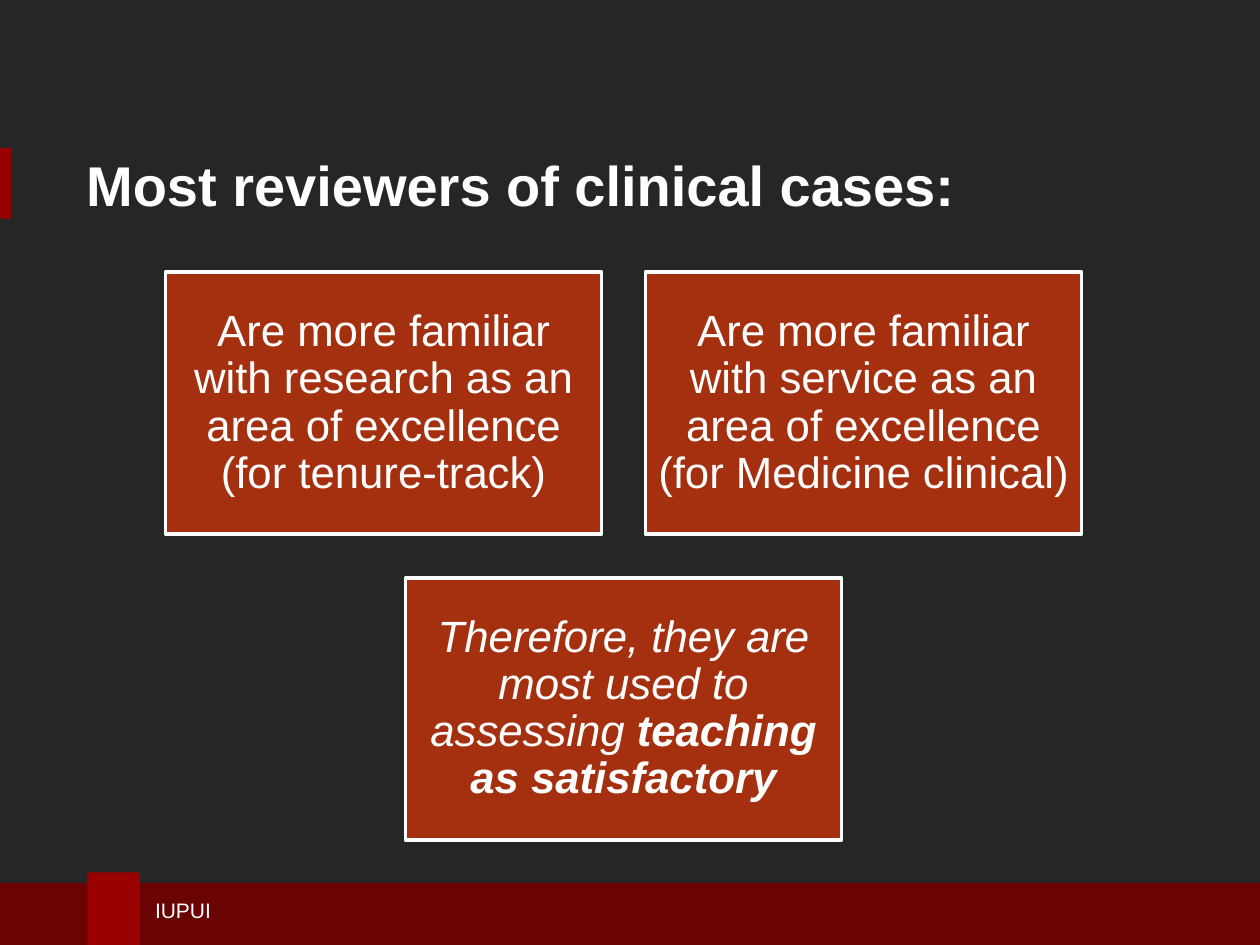
import pptx
import pptx.dml.color
import pptx.enum.shapes
import pptx.enum.text
import pptx.oxml.ns
import pptx.util
from pptx.util import Pt

RGBColor = pptx.dml.color.RGBColor
BACKGROUND = RGBColor(0x26, 0x26, 0x26)
CRIMSON = RGBColor(0x99, 0x00, 0x00)
DARK_CRIMSON = RGBColor(0x69, 0x03, 0x04)
RUST = RGBColor(0xA5, 0x30, 0x0F)
WHITE = RGBColor(0xFF, 0xFF, 0xFF)
FONT = "Arial"

CARDS = [
    [("Are more familiar with research as an area of excellence (for tenure-track)", False, False)],
    [("Are more familiar with service as an area of excellence (for Medicine clinical)", False, False)],
    [
        ("Therefore, they are most used to assessing ", False, True),
        ("teaching as satisfactory", True, True),
    ],
]


def format_run(run, size, bold=False, italic=False):
    """Apply the slide's font and white colour to a run."""
    run.font.name = FONT
    run.font.size = Pt(size)
    run.font.bold = bold
    run.font.italic = italic
    run.font.color.rgb = WHITE


def add_rectangle(slide, left, top, width, height, fill):
    """Add a flat rectangle without an outline."""
    shape = slide.shapes.add_shape(
        pptx.enum.shapes.MSO_SHAPE.RECTANGLE, Pt(left), Pt(top), Pt(width), Pt(height)
    )
    shape.shadow.inherit = False
    shape.fill.solid()
    shape.fill.fore_color.rgb = fill
    shape.line.fill.background()
    return shape


def add_footer(slide, left, top, width, height):
    """Draw the footer band with its raised block and the campus name."""
    add_rectangle(slide, left, top, width, height, DARK_CRIMSON)
    add_rectangle(slide, left + 52, top - 6, 30, height + 6, CRIMSON)
    label = slide.shapes.add_textbox(Pt(left + 83.5), Pt(top + 5), Pt(284), Pt(21.6))
    label.text_frame.word_wrap = True
    label.text_frame.vertical_anchor = pptx.enum.text.MSO_ANCHOR.MIDDLE
    label.text_frame.text = "IUPUI"
    format_run(label.text_frame.paragraphs[0].runs[0], 12)


def add_title(slide, left, top, width, height):
    """Place the title and the accent bar at the slide edge."""
    add_rectangle(slide, 0, top + 4.5, 6.5, 40.5, CRIMSON)
    title = slide.shapes.title
    title.left, title.top, title.width, title.height = Pt(left), Pt(top), Pt(width), Pt(height)
    title.text_frame.text = "Most reviewers of clinical cases:"
    title.text_frame.word_wrap = True
    title.text_frame.auto_size = pptx.enum.text.MSO_AUTO_SIZE.NONE
    title.text_frame.vertical_anchor = pptx.enum.text.MSO_ANCHOR.MIDDLE
    paragraph = title.text_frame.paragraphs[0]
    paragraph.alignment = pptx.enum.text.PP_ALIGN.LEFT
    format_run(paragraph.runs[0], 32, bold=True)


def add_card(slide, left, top, width, height, parts):
    """Draw one outlined card with centred text."""
    card = add_rectangle(slide, left, top, width, height, RUST)
    card.line.color.rgb = WHITE
    card.line.width = Pt(2)
    frame = card.text_frame
    frame.word_wrap = True
    frame.vertical_anchor = pptx.enum.text.MSO_ANCHOR.MIDDLE
    frame.margin_left = frame.margin_right = Pt(7.2)
    frame.margin_top = frame.margin_bottom = Pt(7.2)
    paragraph = frame.paragraphs[0]
    paragraph.alignment = pptx.enum.text.PP_ALIGN.CENTER
    paragraph.line_spacing = 0.9
    for text, bold, italic in parts:
        run = paragraph.add_run()
        run.text = text
        format_run(run, 25, bold, italic)


def add_card_grid(slide, left, top, width, height, cards, columns=2, gap=25):
    """Lay cards out in rows, centring a row that is not full."""
    rows = [cards[start:start + columns] for start in range(0, len(cards), columns)]
    card_width = (width - gap * (columns - 1)) / columns
    card_height = (height - gap * (len(rows) - 1)) / len(rows)
    for row_index, row in enumerate(rows):
        row_width = len(row) * (card_width + gap) - gap
        row_left = left + (width - row_width) / 2
        row_top = top + row_index * (card_height + gap)
        for column, parts in enumerate(row):
            card_left = row_left + column * (card_width + gap)
            add_card(slide, card_left, row_top, card_width, card_height, parts)


def main():
    """Build the slide and save the presentation."""
    presentation = pptx.Presentation()
    presentation.slide_width, presentation.slide_height = Pt(720), Pt(540)
    slide = presentation.slides.add_slide(presentation.slide_layouts[5])
    slide.background.fill.solid()
    slide.background.fill.fore_color.rgb = BACKGROUND
    add_footer(slide, -2, 504.5, 726, 36)
    add_title(slide, 42, 80, 630, 50.5)
    add_card_grid(slide, 94.5, 155.5, 523.5, 324.5, CARDS)
    presentation.save("out.pptx")


if __name__ == "__main__":
    main()
